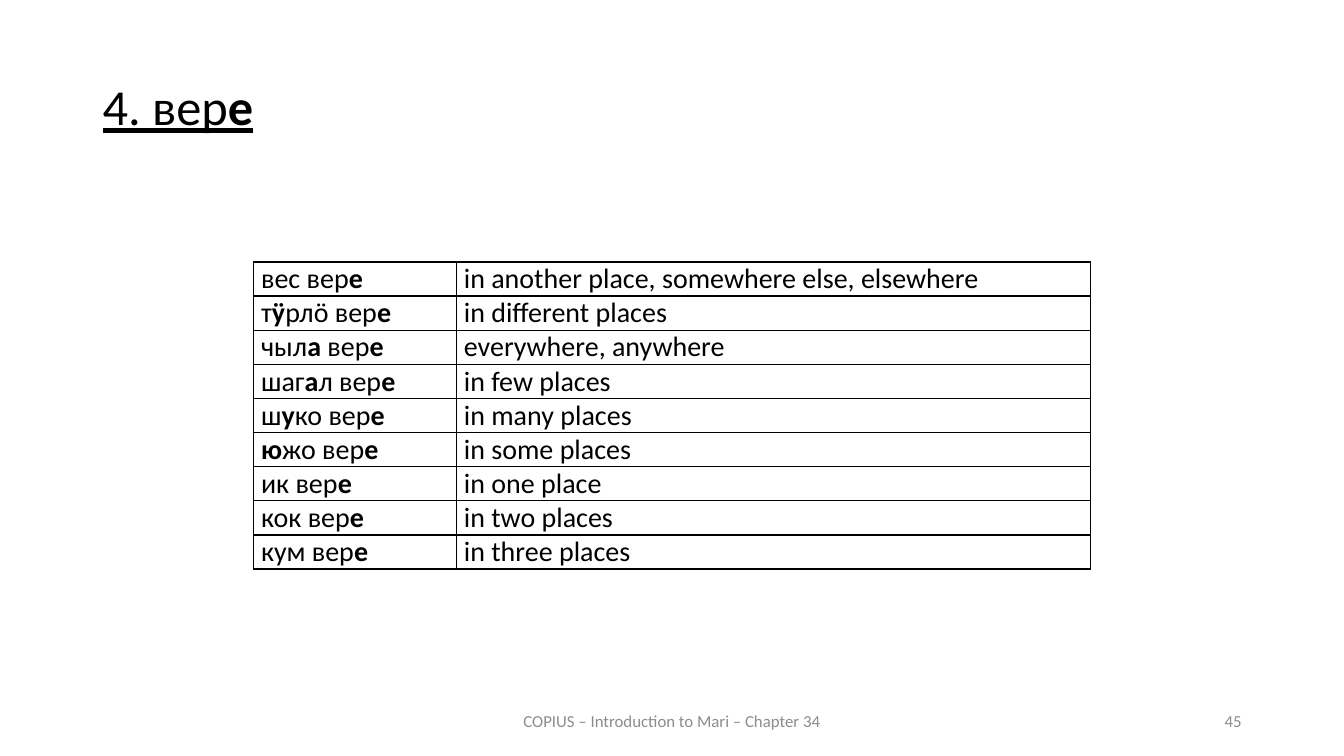
from dataclasses import dataclass

import pptx
import pptx.dml.color
import pptx.enum.text
import pptx.oxml
import pptx.oxml.ns
import pptx.util
from pptx.util import Cm

FONT = "Calibri"
COLORS = {"text": "000000", "footer": "8C8C8C", "border": "000000"}
ALIGN = pptx.enum.text.PP_ALIGN
ANCHOR = pptx.enum.text.MSO_ANCHOR


@dataclass(frozen=True)
class Phrase:
    mari: str
    english: str


@dataclass(frozen=True)
class Footer:
    text: str
    left: float
    width: float
    align: ALIGN


PHRASES = [
    Phrase("вес вер*е*", "in another place, somewhere else, elsewhere"),
    Phrase("т*ӱ*рлӧ вер*е*", "in different places"),
    Phrase("чыл*а* вер*е*", "everywhere, anywhere"),
    Phrase("шаг*а*л вер*е*", "in few places"),
    Phrase("ш*у*ко вер*е*", "in many places"),
    Phrase("*ю*жо вер*е*", "in some places"),
    Phrase("ик вер*е*", "in one place"),
    Phrase("кок вер*е*", "in two places"),
    Phrase("кум вер*е*", "in three places"),
]
FOOTERS = [
    Footer("COPIUS – Introduction to Mari – Chapter 34", 11.22, 11.43, ALIGN.CENTER),
    Footer("45", 23.92, 7.62, ALIGN.RIGHT),
]
COLUMN_WIDTHS = [5.11, 15.98]
ROW_HEIGHT = 0.86


def write(tf, text: str, size: int, color: str, align: ALIGN):
    p = tf.paragraphs[0]
    p.alignment = align
    p.font.name = FONT
    p.font.size = pptx.util.Pt(size)
    p.font.color.rgb = pptx.dml.color.RGBColor.from_string(COLORS[color])
    for i, part in enumerate(text.split("*")):
        if part:
            r = p.add_run()
            r.text = part
            if i % 2:
                r.font.bold = True
    return p


def add_title(s, text: str) -> None:
    sp = s.shapes.title
    sp.left, sp.top, sp.width, sp.height = Cm(2.33), Cm(1.93), Cm(29.21), Cm(2.11)
    tf = sp.text_frame
    tf.auto_size = pptx.enum.text.MSO_AUTO_SIZE.NONE
    tf.vertical_anchor = ANCHOR.TOP
    p = write(tf, text, 36, "text", ALIGN.JUSTIFY)
    p.line_spacing = 0.9
    p.space_before = pptx.util.Pt(12)
    p.font.underline = True


def add_footer(s, footer: Footer) -> None:
    sp = s.shapes.add_textbox(Cm(footer.left), Cm(17.65), Cm(footer.width), Cm(1.01))
    tf = sp.text_frame
    tf.word_wrap = True
    tf.vertical_anchor = ANCHOR.MIDDLE
    write(tf, footer.text, 12, "footer", footer.align)


def add_borders(cell) -> None:
    tc_pr = cell._tc.get_or_add_tcPr()
    for i, side in enumerate(("lnL", "lnR", "lnT", "lnB")):
        tc_pr.insert(i, pptx.oxml.parse_xml(
            f'<a:{side} {pptx.oxml.ns.nsdecls("a")} w="12700"><a:solidFill>'
            f'<a:srgbClr val="{COLORS["border"]}"/></a:solidFill></a:{side}>'))


def fill_cell(cell, text: str) -> None:
    cell.margin_left = cell.margin_right = Cm(0.19)
    cell.margin_top = cell.margin_bottom = 0
    cell.fill.background()
    add_borders(cell)
    write(cell.text_frame, text, 20, "text", ALIGN.JUSTIFY)


def add_phrase_table(s, phrases: list[Phrase]) -> None:
    table = s.shapes.add_table(
        len(phrases), len(COLUMN_WIDTHS), Cm(6.39), Cm(6.6),
        Cm(sum(COLUMN_WIDTHS)), Cm(ROW_HEIGHT * len(phrases))).table
    table.first_row = table.horz_banding = False
    for column, width in zip(table.columns, COLUMN_WIDTHS):
        column.width = Cm(width)
    for row, phrase in zip(table.rows, phrases):
        row.height = Cm(ROW_HEIGHT)
        for cell, text in zip(row.cells, (phrase.mari, phrase.english)):
            fill_cell(cell, text)


def main() -> None:
    prs = pptx.Presentation()
    prs.slide_width, prs.slide_height = Cm(33.87), Cm(19.05)
    s = prs.slides.add_slide(prs.slide_layouts[5])
    add_title(s, "4. вер*е*")
    for footer in FOOTERS:
        add_footer(s, footer)
    add_phrase_table(s, PHRASES)
    prs.save("out.pptx")


if __name__ == "__main__":
    main()
